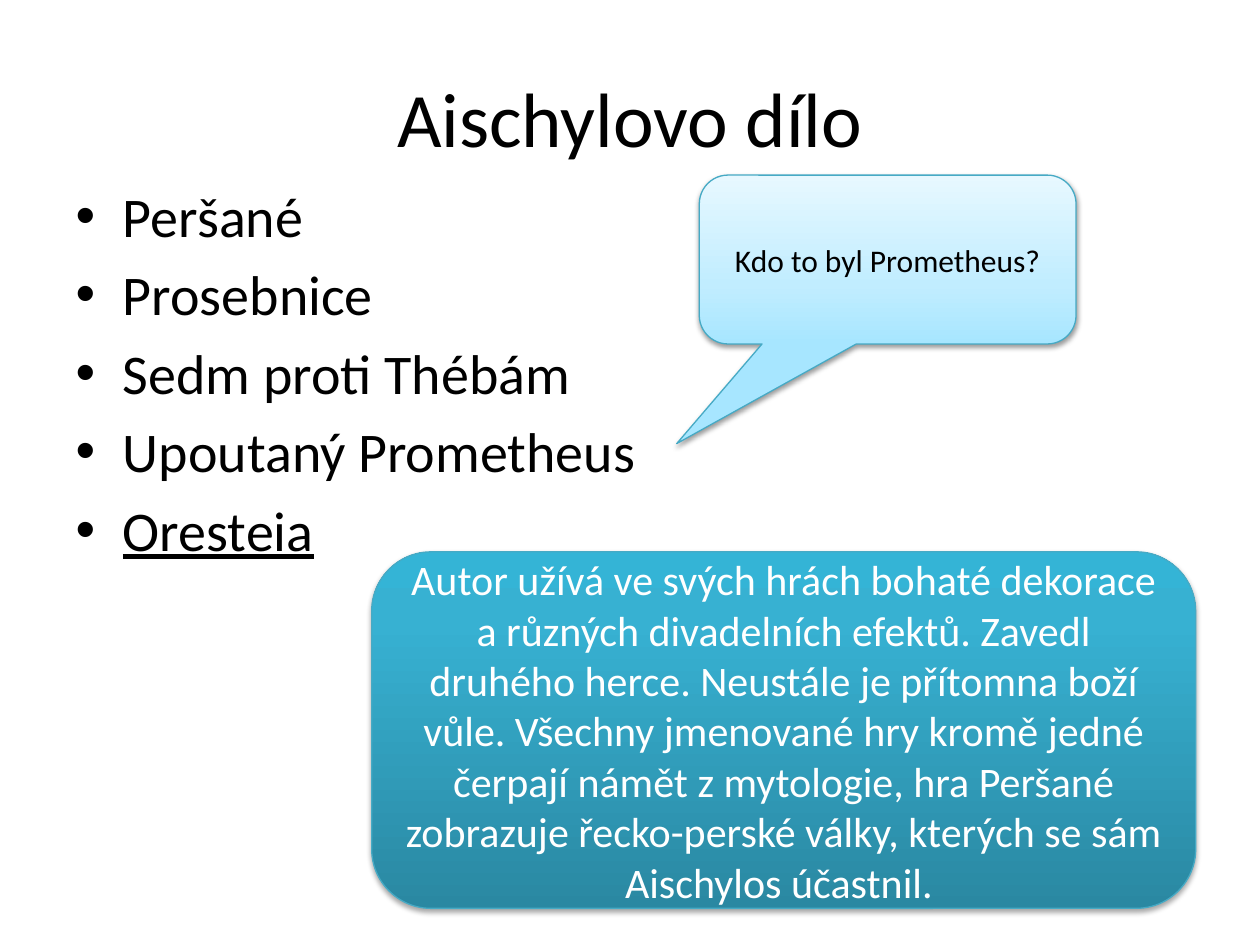
from lxml import etree
from pptx import Presentation
from pptx.dml.color import RGBColor
from pptx.enum.shapes import MSO_SHAPE
from pptx.enum.text import MSO_ANCHOR, PP_ALIGN
from pptx.oxml.ns import qn
from pptx.util import Inches, Pt

ROUND_RECT = MSO_SHAPE.ROUNDED_RECTANGLE
CALLOUT = MSO_SHAPE.ROUNDED_RECTANGULAR_CALLOUT
CENTER, LEFT = PP_ALIGN.CENTER, PP_ALIGN.LEFT
MIDDLE, TOP = MSO_ANCHOR.MIDDLE, MSO_ANCHOR.TOP

COLORS = {
    "text": "000000",
    "light_text": "FFFFFF",
    "outline": "46AAC5",
    "shadow": "000000",
    "teal_dark": "2A88A2",
    "teal": "37B1D2",
    "teal_bright": "34B4D6",
    "sky": "A7E6FF",
    "sky_light": "C1EDFF",
    "sky_pale": "E7F8FF",
}
TEAL_GRADIENT = [(0, "teal_dark"), (80, "teal"), (100, "teal_bright")]
SKY_GRADIENT = [(0, "sky"), (35, "sky_light"), (100, "sky_pale")]


class SlideBuilder:
    font = "Calibri"

    def __init__(self, slide):
        self.slide = slide

    def place(self, sp, box):
        for name, value in zip(("left", "top", "width", "height"), box):
            setattr(sp, name, Inches(value))

    def set_text(self, sp, lines, size, color, align, anchor, underlined=()):
        tf = sp.text_frame
        tf.word_wrap = True
        tf.vertical_anchor = anchor
        for i, line in enumerate(lines):
            p = tf.paragraphs[0] if i == 0 else tf.add_paragraph()
            p.alignment = align
            if i == 0:
                p.space_before = Pt(0)
            r = p.add_run()
            r.text = line
            style = {"name": self.font, "size": Pt(size)}
            if line in underlined:
                style["underline"] = True
            for name, value in style.items():
                setattr(r.font, name, value)
            r.font.color.rgb = RGBColor.from_string(COLORS[color])

    def title(self, text, box):
        sp = self.slide.shapes.title
        self.place(sp, box)
        self.set_text(sp, [text], 44, "text", CENTER, MIDDLE)

    def bullets(self, lines, box, underlined):
        sp = self.slide.placeholders[1]
        self.place(sp, box)
        self.set_text(sp, lines, 32, "text", LEFT, TOP, underlined)

    def gradient(self, sp, stops):
        sp.fill.gradient()
        sp.fill.gradient_angle = 90
        stop_list = sp._element.spPr.find(".//" + qn("a:gsLst"))
        for old in list(stop_list):
            stop_list.remove(old)
        for position, color in stops:
            gs = etree.SubElement(stop_list, qn("a:gs"), pos=str(position * 1000))
            etree.SubElement(gs, qn("a:srgbClr"), val=COLORS[color])

    def shadow(self, sp, distance, opacity):
        sp.shadow.inherit = False
        effects = sp._element.spPr.find(qn("a:effectLst"))
        outer = etree.SubElement(
            effects, qn("a:outerShdw"), blurRad=str(Pt(3.1)),
            dist=str(Pt(distance)), dir="5400000", rotWithShape="0")
        color = etree.SubElement(outer, qn("a:srgbClr"), val=COLORS["shadow"])
        etree.SubElement(color, qn("a:alpha"), val=str(opacity * 1000))

    def bubble(self, kind, text, box, stops, size, color, shadow, adjustments=()):
        sp = self.slide.shapes.add_shape(kind, *map(Inches, box))
        for i, value in enumerate(adjustments):
            sp.adjustments[i] = value
        self.gradient(sp, stops)
        sp.line.color.rgb = RGBColor.from_string(COLORS["outline"])
        sp.line.width = Pt(0.75)
        self.shadow(sp, *shadow)
        self.set_text(sp, [text], size, color, CENTER, MIDDLE)


def main():
    prs = Presentation()
    prs.slide_width, prs.slide_height = Inches(10), Inches(7.5)
    s = SlideBuilder(prs.slides.add_slide(prs.slide_layouts[1]))

    s.title("Aischylovo dílo", (0.5, 0.3, 9, 1.25))
    s.bullets(
        ["Peršané", "Prosebnice", "Sedm proti Thébám", "Upoutaný Prometheus", "Oresteia"],
        (0.5, 1.39, 9, 5.31), underlined=("Oresteia",))
    s.bubble(
        ROUND_RECT,
        "Autor užívá ve svých hrách bohaté dekorace a různých divadelních efektů. "
        "Zavedl druhého herce. Neustále je přítomna boží vůle. Všechny jmenované hry "
        "kromě jedné čerpají námět z mytologie, hra Peršané zobrazuje řecko-perské "
        "války, kterých se sám Aischylos účastnil. ",
        (2.95, 4.38, 6.54, 2.83), TEAL_GRADIENT, 24, "light_text", (1.8, 35))
    s.bubble(
        CALLOUT, "Kdo to byl Prometheus?", (5.55, 1.39, 2.99, 1.34),
        SKY_GRADIENT, 18, "text", (1.6, 38), adjustments=(-0.56, 1.09, 0.17))

    prs.save("out.pptx")


if __name__ == "__main__":
    main()
